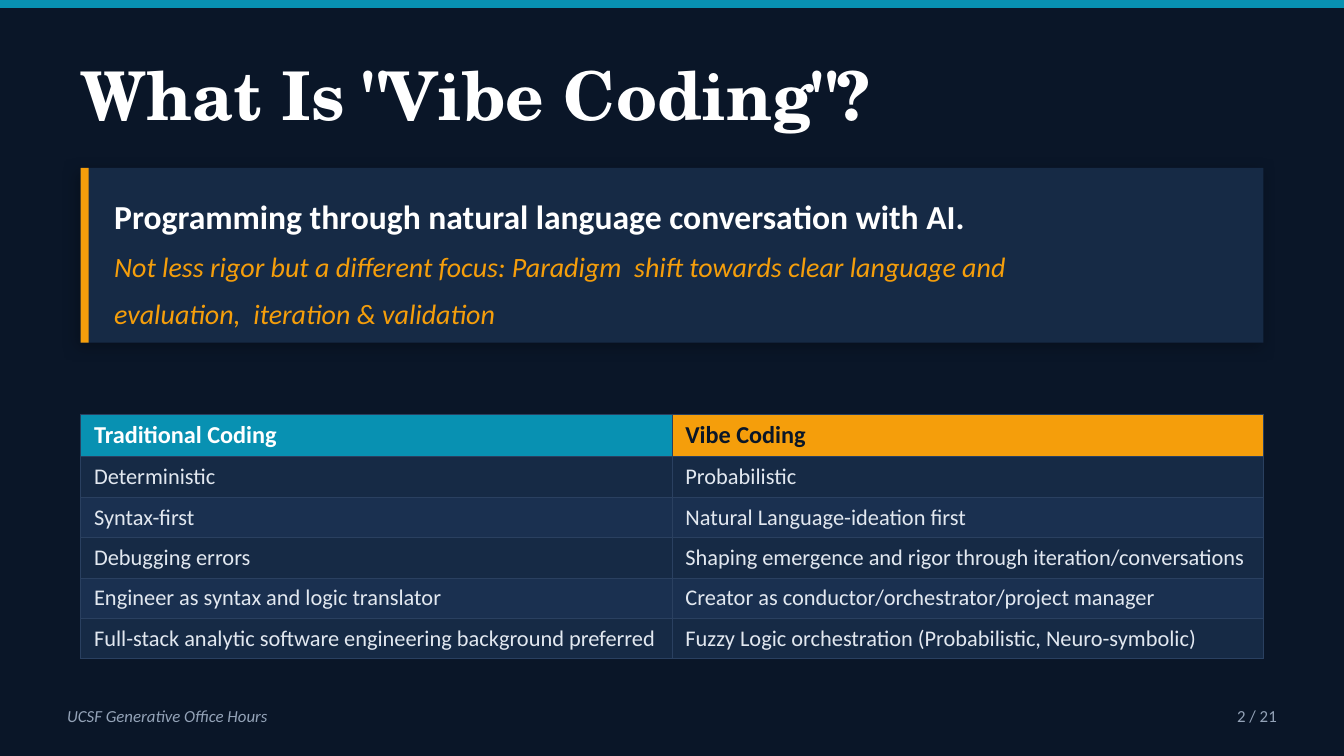
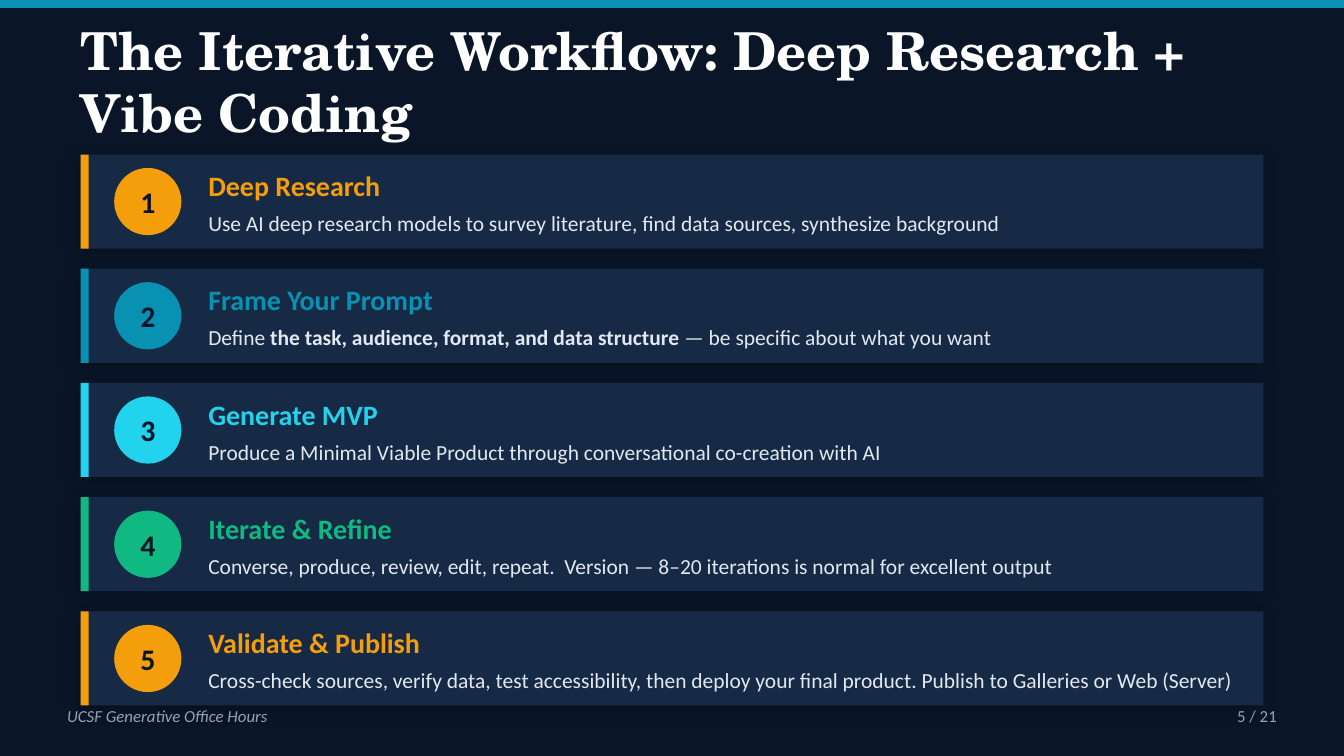
from dataclasses import dataclass
from typing import NamedTuple

from lxml import etree
from pptx import Presentation
from pptx.dml.color import RGBColor
from pptx.enum.shapes import MSO_SHAPE as Preset
from pptx.enum.text import MSO_ANCHOR as Anchor, PP_ALIGN as Align
from pptx.oxml.ns import qn
from pptx.util import Pt


# Theme: colours, fonts and type sizes
@dataclass(frozen=True)
class Theme:
    night: str = "0A1628"
    card: str = "162A45"
    stripe: str = "1A3050"
    border: str = "2A4060"
    teal: str = "0891B2"
    amber: str = "F59E0B"
    cyan: str = "22D3EE"
    green: str = "10B981"
    white: str = "FFFFFF"
    pale: str = "E2E8F0"
    muted: str = "94A3B8"
    shadow: str = "000000"
    title_font: str = "TeX Gyre Schola"
    body_font: str = "Calibri"
    title: float = 36
    long_title: float = 28
    lead: float = 18
    number: float = 16
    heading: float = 15
    table_head: float = 13
    table_body: float = 12
    detail: float = 11.5
    footer: float = 9


THEME = Theme()


class Frame(NamedTuple):
    left: float
    top: float
    width: float
    height: float

    def points(self) -> tuple:
        return tuple(Pt(length) for length in self)


@dataclass(frozen=True)
class Span:
    text: str
    size: float
    color: str
    bold: bool = False
    italic: bool = False
    font: str = THEME.body_font


@dataclass(frozen=True)
class Step:
    heading: str
    color: str
    detail: tuple[Span, ...]
    detail_width: float = 547.2


# Shared geometry, in points
PAGE_WIDTH, PAGE_HEIGHT = 720, 405
MARGIN, CONTENT_WIDTH = 43.2, 633.6
BAR = 4.32
CARD_INSET = 18
FOOTER_TOP, FOOTER_HEIGHT = 370.8, 25.2
PAGE_COUNT = 21


# Drawing helpers
def rgb(color: str) -> RGBColor:
    return RGBColor.from_string(color)


def add_spans(para, spans: tuple[Span, ...]) -> None:
    for span in spans:
        for index, line in enumerate(span.text.split("\n")):
            if index:
                para.add_line_break()
            run = para.add_run()
            run.text = line
            font = run.font
            font.name, font.size = span.font, Pt(span.size)
            font.bold, font.italic = span.bold, span.italic
            font.color.rgb = rgb(span.color)


def add_text(page, frame: Frame, *paragraphs: tuple[Span, ...],
             align: Align = Align.LEFT, spacing: float | None = None) -> None:
    box = page.shapes.add_textbox(*frame.points()).text_frame
    box.word_wrap = True
    box.vertical_anchor = Anchor.MIDDLE
    box.margin_left = box.margin_right = box.margin_top = box.margin_bottom = 0
    for index, spans in enumerate(paragraphs):
        para = box.add_paragraph() if index else box.paragraphs[0]
        para.alignment = align
        if spacing:
            para.line_spacing = spacing
        add_spans(para, spans)


def add_block(page, frame: Frame, color: str, preset: Preset = Preset.RECTANGLE):
    shape = page.shapes.add_shape(preset, *frame.points())
    shape.shadow.inherit = False
    shape.fill.solid()
    shape.fill.fore_color.rgb = rgb(color)
    shape.line.fill.background()
    return shape


def add_card(page, top: float, height: float, accent: str) -> None:
    card = add_block(page, Frame(MARGIN, top, CONTENT_WIDTH, height), THEME.card)
    effects = card._element.spPr.find(qn("a:effectLst"))
    shadow = etree.SubElement(effects, qn("a:outerShdw"), blurRad=str(Pt(8)),
                              dist=str(Pt(3)), dir=str(135 * 60000),
                              algn="bl", rotWithShape="0")
    tint = etree.SubElement(shadow, qn("a:srgbClr"), val=THEME.shadow)
    etree.SubElement(tint, qn("a:alpha"), val="25000")
    add_block(page, Frame(MARGIN, top, BAR, height), accent)


def add_cell_borders(cell) -> None:
    properties = cell._tc.get_or_add_tcPr()
    for side in ("lnL", "lnR", "lnT", "lnB"):
        line = etree.SubElement(properties, qn(f"a:{side}"), w=str(Pt(0.5)))
        fill = etree.SubElement(line, qn("a:solidFill"))
        etree.SubElement(fill, qn("a:srgbClr"), val=THEME.border)


def fill_cell(cell, span: Span, color: str) -> None:
    add_cell_borders(cell)
    cell.fill.solid()
    cell.fill.fore_color.rgb = rgb(color)
    add_spans(cell.text_frame.paragraphs[0], (span,))


# Parts every page has
def add_page(deck, title: str, title_size: float, title_frame: Frame):
    page = deck.slides.add_slide(deck.slide_layouts[6])
    page.background.fill.solid()
    page.background.fill.fore_color.rgb = rgb(THEME.night)
    add_block(page, Frame(0, 0, PAGE_WIDTH, BAR), THEME.teal)
    add_text(page, title_frame, (Span(title, title_size, THEME.white, bold=True,
                                      font=THEME.title_font),))
    return page


def add_footer(page, number: int) -> None:
    label = Span("UCSF Generative Office Hours", THEME.footer, THEME.muted, italic=True)
    add_text(page, Frame(36, FOOTER_TOP, 288, FOOTER_HEIGHT), (label,))
    count = Span(f"{number} / {PAGE_COUNT}", THEME.footer, THEME.muted)
    add_text(page, Frame(612, FOOTER_TOP, 72, FOOTER_HEIGHT), (count,), align=Align.RIGHT)


# Comparison page
COMPARISON = (
    ("Traditional Coding", "Vibe Coding"),
    ("Deterministic", "Probabilistic"),
    ("Syntax-first", "Natural Language-ideation first"),
    ("Debugging errors", "Shaping emergence and rigor through iteration/conversations"),
    ("Engineer as syntax and logic translator",
     "Creator as conductor/orchestrator/project manager"),
    ("Full-stack analytic software engineering background preferred",
     "Fuzzy Logic orchestration (Probabilistic, Neuro-symbolic)"),
)
HEAD_COLORS = ((THEME.teal, THEME.white), (THEME.amber, THEME.night))
HEAD_ROW, BODY_ROW = 23, 21.6


def add_comparison(page, top: float) -> None:
    height = HEAD_ROW + BODY_ROW * (len(COMPARISON) - 1)
    frame = Frame(MARGIN, top, CONTENT_WIDTH, height)
    table = page.shapes.add_table(len(COMPARISON), 2, *frame.points()).table
    for row, texts in enumerate(COMPARISON):
        table.rows[row].height = Pt(BODY_ROW if row else HEAD_ROW)
        for column, text in enumerate(texts):
            if row:
                fill = THEME.card if row % 2 else THEME.stripe
                span = Span(text, THEME.table_body, THEME.pale)
            else:
                fill, ink = HEAD_COLORS[column]
                span = Span(text, THEME.table_head, ink, bold=True)
            fill_cell(table.cell(row, column), span, fill)


def build_definition(deck) -> None:
    page = add_page(deck, 'What Is "Vibe Coding"?', THEME.title,
                    Frame(MARGIN, 21.6, 648, 57.6))
    add_card(page, 90, 93.6, THEME.amber)
    lead = Span("Programming through natural language conversation with AI.",
                THEME.lead, THEME.white, bold=True)
    remark = Span("Not less rigor but a different focus: Paradigm  shift towards clear "
                  "language and \nevaluation,  iteration & validation",
                  THEME.heading, THEME.amber, italic=True)
    add_text(page, Frame(MARGIN + CARD_INSET, 97.2, 597.6, 79.2),
             (lead,), (remark,), spacing=1.4)
    add_comparison(page, 221.76)
    add_footer(page, 2)


# Workflow page
def detail(text: str, bold: bool = False) -> Span:
    return Span(text, THEME.detail, THEME.pale, bold)


STEPS = (
    Step("Deep Research", THEME.amber,
         (detail("Use AI deep research models to survey literature, find data sources, "
                 "synthesize background"),)),
    Step("Frame Your Prompt", THEME.teal,
         (detail("Define "),
          detail("the task, audience, format, and data structure ", bold=True),
          detail("— be specific about what you want"))),
    Step("Generate MVP", THEME.cyan,
         (detail("Produce a Minimal Viable Product through conversational "
                 "co-creation with AI"),)),
    Step("Iterate & Refine", THEME.green,
         (detail("Converse, produce, review, edit, repeat.  Version — 8–20 iterations "
                 "is normal for excellent output"),)),
    Step("Validate & Publish", THEME.amber,
         (detail("Cross-check sources, verify data, test accessibility, then deploy your "
                 "final product. Publish to Galleries or Web (Server)"),), 565.2),
)
STEPS_TOP, STEP_HEIGHT, STEP_PITCH = 82.8, 50.4, 61.2
STEP_TEXT_LEFT, STEP_LINE = 111.6, 21.6


def add_step(page, number: int, step: Step, top: float) -> None:
    add_card(page, top, STEP_HEIGHT, step.color)
    badge = Frame(MARGIN + CARD_INSET, top + 7.2, 36, 36)
    add_block(page, badge, step.color, Preset.OVAL)
    add_text(page, badge, (Span(str(number), THEME.number, THEME.night, bold=True),),
             align=Align.CENTER)
    heading = Span(step.heading, THEME.heading, step.color, bold=True)
    add_text(page, Frame(STEP_TEXT_LEFT, top + 5.76, 180, STEP_LINE), (heading,))
    add_text(page, Frame(STEP_TEXT_LEFT, top + 25.92, step.detail_width, STEP_LINE),
             step.detail)


def build_workflow(deck) -> None:
    page = add_page(deck, "The Iterative Workflow: Deep Research + Vibe Coding",
                    THEME.long_title, Frame(MARGIN, 18, 648, 50.4))
    for index, step in enumerate(STEPS):
        add_step(page, index + 1, step, STEPS_TOP + index * STEP_PITCH)
    add_footer(page, 5)


def main() -> None:
    deck = Presentation()
    deck.slide_width, deck.slide_height = Pt(PAGE_WIDTH), Pt(PAGE_HEIGHT)
    build_definition(deck)
    build_workflow(deck)
    deck.save("out.pptx")


if __name__ == "__main__":
    main()
